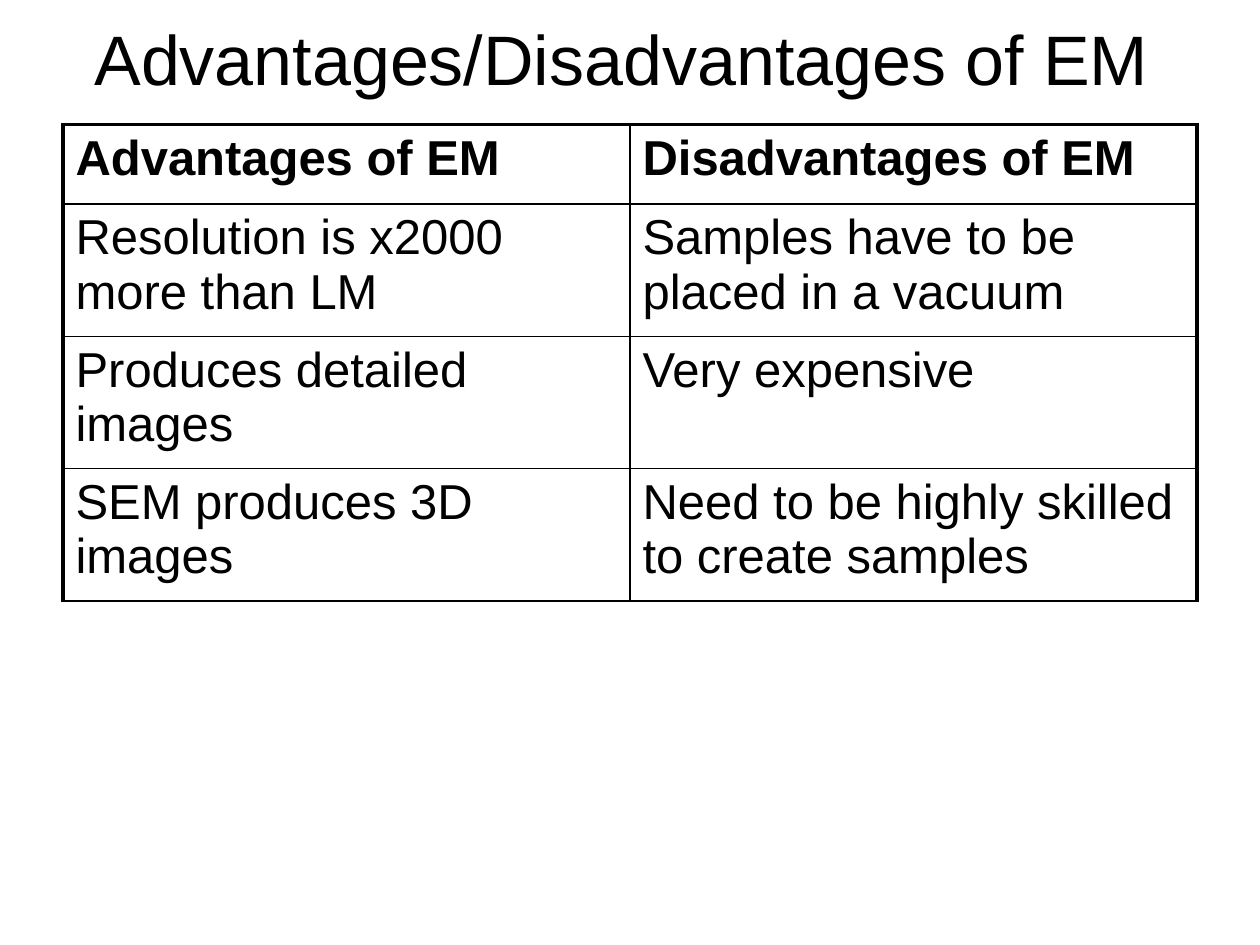
from lxml import etree
from pptx import Presentation
from pptx.dml.color import RGBColor
from pptx.enum.text import MSO_ANCHOR, PP_ALIGN
from pptx.oxml.ns import qn
from pptx.util import Inches, Pt

MIDDLE, TOP = MSO_ANCHOR.MIDDLE, MSO_ANCHOR.TOP
LEFT, CENTER = PP_ALIGN.LEFT, PP_ALIGN.CENTER
INK, PAPER = "000000", "FFFFFF"
THIN, THICK = 1, 2.25
ROWS = [
    ("Advantages of EM", "Disadvantages of EM"),
    ("Resolution is x2000 more than LM", "Samples have to be placed in a vacuum"),
    ("Produces detailed images", "Very expensive"),
    ("SEM produces 3D images", "Need to be highly skilled to create samples"),
]


def color(code):
    return RGBColor.from_string(code)


class Deck:
    """Holds the font and the current slide, and adds each kind of element."""

    def __init__(self, font):
        self.font = font
        self.prs = Presentation()
        self.prs.slide_width, self.prs.slide_height = Inches(10), Inches(7.5)
        self.slide = self.prs.slides.add_slide(self.prs.slide_layouts[5])
        fill = self.slide.background.fill
        fill.solid()
        fill.fore_color.rgb = color(PAPER)

    def label(self, frame, text, size, align, bold=False):
        frame.word_wrap = True
        para = frame.paragraphs[0]
        para.alignment = align
        run = para.add_run()
        run.text = text
        run.font.name = self.font
        run.font.size = Pt(size)
        run.font.bold = bold
        run.font.color.rgb = color(INK)

    def title(self, text, left, top, width, height):
        box = self.slide.shapes.title
        box.left, box.top = Inches(left), Inches(top)
        box.width, box.height = Inches(width), Inches(height)
        box.text_frame.vertical_anchor = MIDDLE
        self.label(box.text_frame, text, 40, CENTER)

    def border(self, cell, side, width):
        props = cell._tc.get_or_add_tcPr()
        line = etree.SubElement(props, qn(f"a:ln{side}"), w=str(Pt(width)))
        fill = etree.SubElement(line, qn("a:solidFill"))
        etree.SubElement(fill, qn("a:srgbClr"), val=INK)

    def table(self, rows, left, top, widths, heights):
        shape = self.slide.shapes.add_table(
            len(rows), len(widths), Inches(left), Inches(top),
            Inches(sum(widths)), Inches(sum(heights)))
        grid = shape.table
        grid.first_row = grid.horz_banding = False
        for col, width in zip(grid.columns, widths):
            col.width = Inches(width)
        for r, texts in enumerate(rows):
            grid.rows[r].height = Inches(heights[r])
            for c, text in enumerate(texts):
                cell = grid.cell(r, c)
                cell.vertical_anchor = TOP
                self.label(cell.text_frame, text, 28, LEFT, r == 0)
                edges = {"L": c == 0, "R": c == len(widths) - 1,
                         "T": r == 0, "B": False}
                for side, outer in edges.items():
                    self.border(cell, side, THICK if outer else THIN)
                cell.fill.background()


def main():
    deck = Deck("Arial")
    deck.title("Advantages/Disadvantages of EM", 0.43, 0, 9, 0.92)
    deck.table(ROWS, 0.5, 0.99, [4.5] * 2, [0.63] + [1.05] * 3)
    deck.prs.save("out.pptx")


if __name__ == "__main__":
    main()
